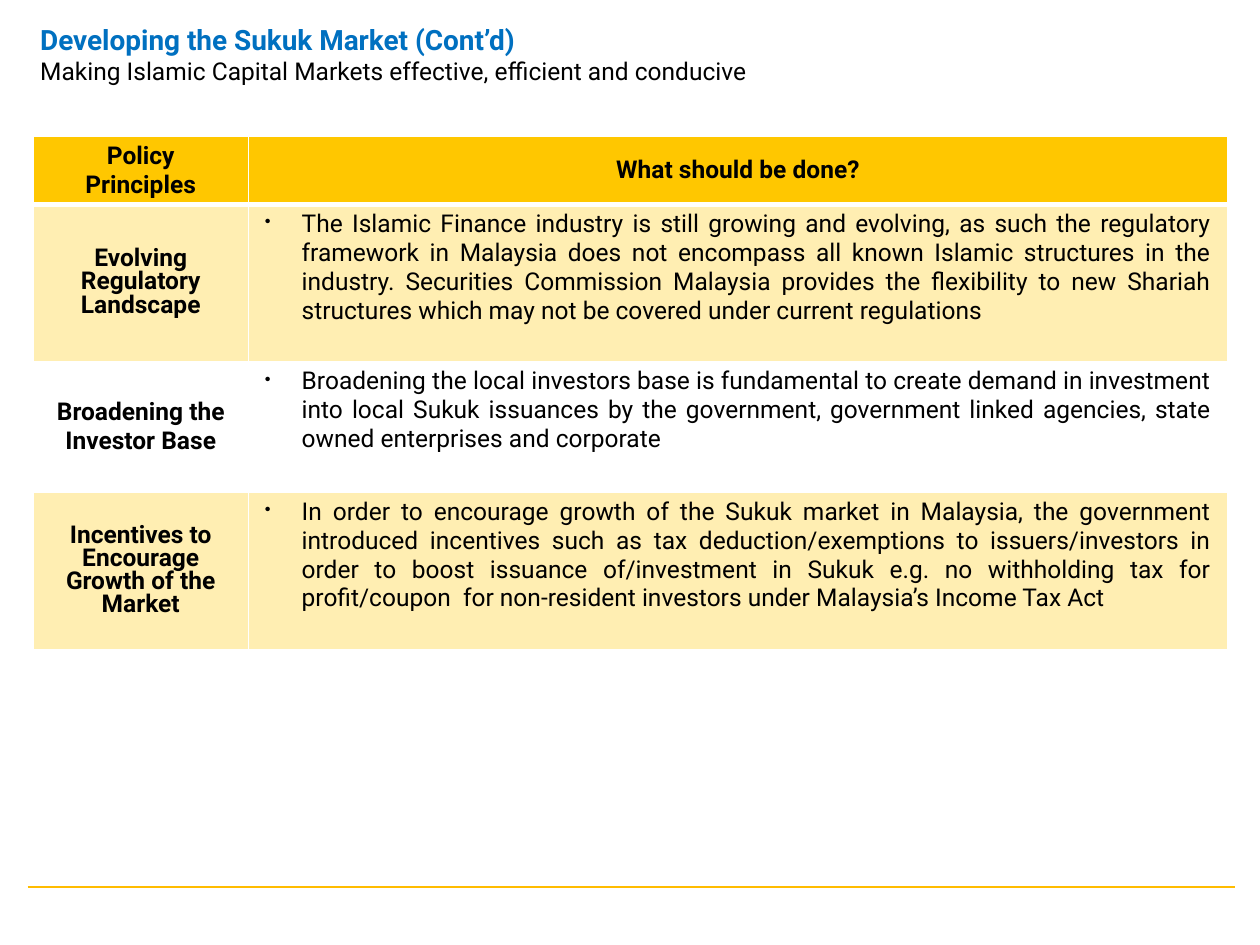
"""Build a slide on policy principles for developing the Sukuk market."""
from typing import NamedTuple, Optional

from lxml.etree import SubElement
from pptx import Presentation
from pptx.dml.color import RGBColor
from pptx.enum.shapes import MSO_CONNECTOR
from pptx.enum.text import MSO_ANCHOR, PP_ALIGN
from pptx.oxml import parse_xml
from pptx.oxml.ns import nsdecls, qn
from pptx.util import Pt

BLACK = RGBColor(0x00, 0x00, 0x00)
BLUE = RGBColor(0x00, 0x70, 0xC0)
AMBER = RGBColor(0xFF, 0xC7, 0x00)
RULE_AMBER = RGBColor(0xFF, 0xBC, 0x00)
WHITE = RGBColor(0xFF, 0xFF, 0xFF)
FONT = "Roboto"
COLUMN_WIDTHS = (123.1, 559.5)
HEADER_HEIGHT = 38.8
HEADINGS = ("Policy Principles", "What should be done?")


class Principle(NamedTuple):
    name: str
    action: str
    height: float
    shaded: bool
    line_spacing: Optional[float]


PRINCIPLES = (
    Principle(
        "Evolving Regulatory Landscape",
        "The Islamic Finance industry is still growing and evolving, as such the "
        "regulatory framework in Malaysia does not encompass all known Islamic "
        "structures in the industry. Securities Commission Malaysia provides the "
        "flexibility to new Shariah structures which may not be covered under "
        "current regulations",
        90, True, 0.8),
    Principle(
        "Broadening the Investor Base",
        "Broadening the local investors base is fundamental to create demand in "
        "investment into local Sukuk issuances by the government, government linked "
        "agencies, state owned enterprises and corporate",
        74.5, False, None),
    Principle(
        "Incentives to Encourage Growth of the Market",
        "In order to encourage growth of the Sukuk market in Malaysia, the government "
        "introduced incentives such as tax deduction/exemptions to issuers/investors "
        "in order to boost issuance of/investment in Sukuk e.g. no withholding tax "
        "for profit/coupon  for non-resident investors under Malaysia’s Income Tax Act",
        90, True, 0.8),
)


def add_run(paragraph, text: str, size: float, color: RGBColor, bold: bool) -> None:
    run = paragraph.add_run()
    run.text = text
    run.font.name = FONT
    run.font.size = Pt(size)
    run.font.bold = bold
    run.font.color.rgb = color


def add_bullet(paragraph) -> None:
    properties = paragraph._p.get_or_add_pPr()
    properties.set("marL", str(Pt(21)))
    properties.set("indent", str(-Pt(21)))
    SubElement(properties, qn("a:buSzPct"), val="70000")
    SubElement(properties, qn("a:buChar"), char="•")


def set_borders(cell, top: float, bottom: float) -> None:
    properties = cell._tc.get_or_add_tcPr()
    widths = {"lnL": 1, "lnR": 1, "lnT": top, "lnB": bottom}
    for position, (side, width) in enumerate(widths.items()):
        properties.insert(position, parse_xml(
            f'<a:{side} {nsdecls("a")} w="{Pt(width)}"><a:solidFill>'
            f'<a:srgbClr val="{WHITE}"/></a:solidFill></a:{side}>'))


def fill_cell(cell, shaded: bool, opacity: int = 100) -> None:
    if not shaded:
        cell.fill.background()
        return
    cell.fill.solid()
    cell.fill.fore_color.rgb = AMBER
    if opacity < 100:
        color = cell._tc.tcPr.find(qn("a:solidFill")).find(qn("a:srgbClr"))
        SubElement(color, qn("a:alpha"), val=str(opacity * 1000))


def write_cell(cell, text: str, bold: bool = True, bulleted: bool = False,
               line_spacing: Optional[float] = None) -> None:
    cell.margin_left = cell.margin_right = Pt(9.4)
    cell.margin_top = cell.margin_bottom = Pt(2.9)
    cell.vertical_anchor = MSO_ANCHOR.TOP if bulleted else MSO_ANCHOR.MIDDLE
    paragraph = cell.text_frame.paragraphs[0]
    paragraph.alignment = PP_ALIGN.JUSTIFY if bulleted else PP_ALIGN.CENTER
    if line_spacing:
        paragraph.line_spacing = line_spacing
    if bulleted:
        add_bullet(paragraph)
    add_run(paragraph, text, 14, BLACK, bold)


def add_principles_table(slide) -> None:
    heights = [HEADER_HEIGHT] + [principle.height for principle in PRINCIPLES]
    table = slide.shapes.add_table(
        len(heights), len(COLUMN_WIDTHS), Pt(18.9), Pt(77.8),
        Pt(sum(COLUMN_WIDTHS)), Pt(sum(heights))).table
    table.first_row = False
    table.horz_banding = False
    for column, width in zip(table.columns, COLUMN_WIDTHS):
        column.width = Pt(width)
    for row, height in zip(table.rows, heights):
        row.height = Pt(height)
    for column, heading in enumerate(HEADINGS):
        cell = table.cell(0, column)
        write_cell(cell, heading)
        fill_cell(cell, True)
        set_borders(cell, 1, 3)
    for row, principle in enumerate(PRINCIPLES, start=1):
        name, action = table.cell(row, 0), table.cell(row, 1)
        write_cell(name, principle.name, line_spacing=principle.line_spacing)
        write_cell(action, principle.action, bold=False, bulleted=True)
        for cell in (name, action):
            fill_cell(cell, principle.shaded, 30)
            set_borders(cell, 3 if row == 1 else 1, 1)


def add_title(slide) -> None:
    title = slide.shapes.add_textbox(Pt(23), Pt(5.8), Pt(544.3), Pt(50.4)).text_frame
    title.word_wrap = True
    title.vertical_anchor = MSO_ANCHOR.MIDDLE
    title.margin_left = title.margin_right = title.margin_top = title.margin_bottom = Pt(0)
    add_run(title.paragraphs[0], "Developing the Sukuk Market (Cont’d)", 16, BLUE, True)
    add_run(title.add_paragraph(),
            "Making Islamic Capital Markets effective, efficient and conducive",
            14, BLACK, False)


def add_footer_rule(slide) -> None:
    rule = slide.shapes.add_connector(
        MSO_CONNECTOR.STRAIGHT, Pt(15.8), Pt(506.9), Pt(705.6), Pt(506.9))
    rule.line.color.rgb = RULE_AMBER
    rule.line.width = Pt(1.5)
    SubElement(rule._element.spPr, qn("a:effectLst"))


def main() -> None:
    presentation = Presentation()
    presentation.slide_width = Pt(720)
    presentation.slide_height = Pt(540)
    slide = presentation.slides.add_slide(presentation.slide_layouts[6])
    add_footer_rule(slide)
    add_principles_table(slide)
    add_title(slide)
    presentation.save("out.pptx")


if __name__ == "__main__":
    main()
